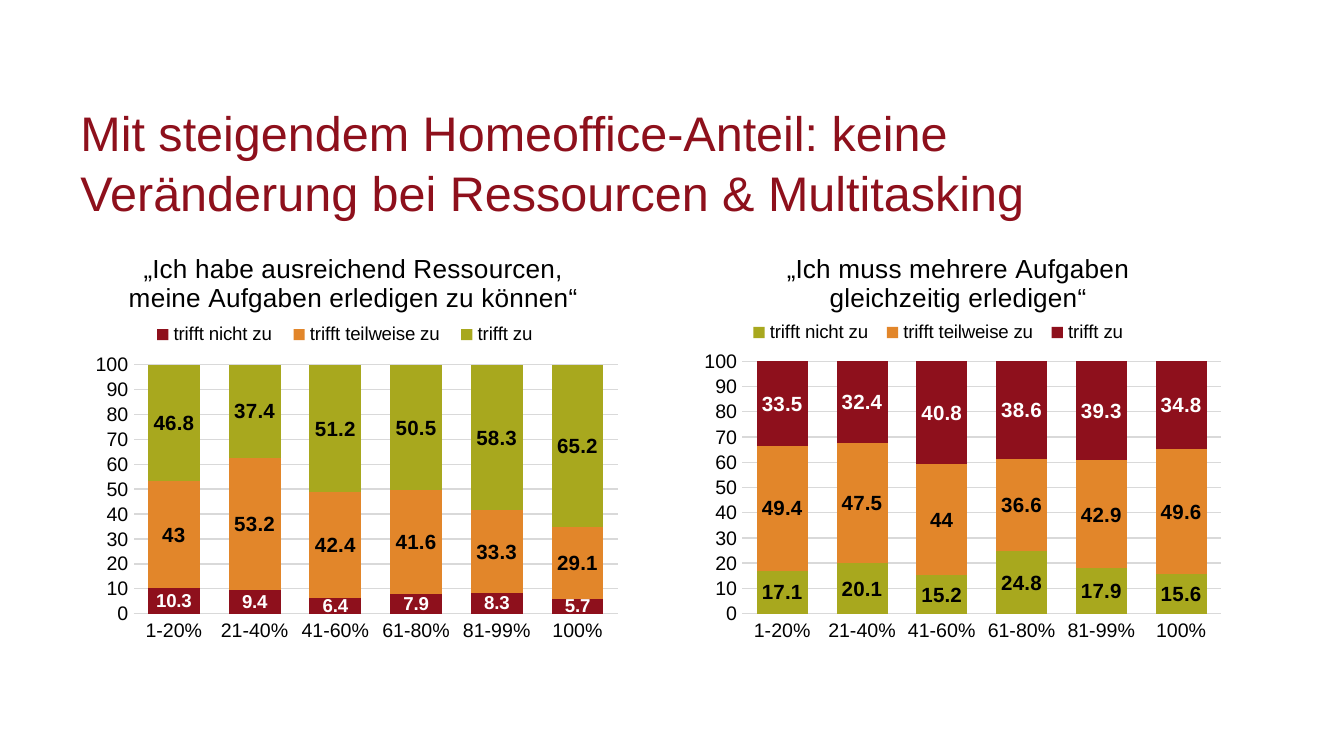
from lxml import etree
from pptx import Presentation
from pptx.chart.data import CategoryChartData
from pptx.dml.color import RGBColor
from pptx.enum.chart import XL_CHART_TYPE, XL_LABEL_POSITION, XL_LEGEND_POSITION, XL_TICK_MARK
from pptx.enum.text import MSO_ANCHOR
from pptx.oxml.ns import qn
from pptx.util import Cm, Pt

STACKED = XL_CHART_TYPE.COLUMN_STACKED
CENTER = XL_LABEL_POSITION.CENTER
LEGEND_TOP = XL_LEGEND_POSITION.TOP
NO_TICK = XL_TICK_MARK.NONE
TOP = MSO_ANCHOR.TOP

RED = RGBColor(0x8E, 0x10, 0x1C)
ORANGE = RGBColor(0xE2, 0x86, 0x2A)
GREEN = RGBColor(0xA8, 0xA8, 0x1E)
GRAY = RGBColor(0xD9, 0xD9, 0xD9)
BLACK = RGBColor(0, 0, 0)
WHITE = RGBColor(255, 255, 255)

FONT = "Arial"
CATEGORIES = ["1-20%", "21-40%", "41-60%", "61-80%", "81-99%", "100%"]
ANSWERS = ["trifft nicht zu", "trifft teilweise zu", "trifft zu"]


def style_font(font, size, color, bold=False):
    font.name = FONT
    font.size = Pt(size)
    font.bold = bold
    font.color.rgb = color


def place(element, index, **position):
    """Give a chart part a manual layout in fractions of the chart."""
    for old_layout in element.findall(qn("c:layout")):
        element.remove(old_layout)
    layout = etree.Element(qn("c:layout"))
    manual = etree.SubElement(layout, qn("c:manualLayout"))
    if index == 0:
        etree.SubElement(manual, qn("c:layoutTarget")).set("val", "inner")
    for axis in ("x", "y"):
        etree.SubElement(manual, qn(f"c:{axis}Mode")).set("val", "edge")
    for name, value in position.items():
        etree.SubElement(manual, qn(f"c:{name}")).set("val", str(value))
    element.insert(index, layout)


presentation = Presentation()
presentation.slide_width = Cm(25.4)
presentation.slide_height = Cm(14.29)
slide = presentation.slides.add_slide(presentation.slide_layouts[6])

# Headline
headline = slide.shapes.add_textbox(Cm(1.27), Cm(1.7), Cm(20.32), Cm(2.9))
frame = headline.text_frame
frame.word_wrap = True
frame.vertical_anchor = TOP
frame.margin_top = Cm(0.2)
paragraph = frame.paragraphs[0]
paragraph.line_spacing = 1.04
run = paragraph.add_run()
run.text = "Mit steigendem Homeoffice-Anteil: keine Veränderung bei Ressourcen & Multitasking"
style_font(run.font, 26, RED)

# Both charts: wording, values, bar colours, first label size and layouts
charts = [
    {
        "left": 1.27,
        "title": ["„Ich habe ausreichend Ressourcen,", "meine Aufgaben erledigen zu können“"],
        "values": [
            [10.3, 9.4, 6.4, 7.9, 8.3, 5.7],
            [43, 53.2, 42.4, 41.6, 33.3, 29.1],
            [46.8, 37.4, 51.2, 50.5, 58.3, 65.2],
        ],
        "colors": [RED, ORANGE, GREEN],
        "label_sizes": [10, 11, 11],
        "title_at": {"x": 0.1, "y": 0.05},
        "legend_at": {"x": 0.13, "y": 0.21, "w": 0.71, "h": 0.07},
        "plot_at": {"x": 0.116, "y": 0.317, "w": 0.846, "h": 0.596},
    },
    {
        "left": 12.7,
        "title": ["„Ich muss mehrere Aufgaben", "gleichzeitig erledigen“"],
        "values": [
            [17.1, 20.1, 15.2, 24.8, 17.9, 15.6],
            [49.4, 47.5, 44, 36.6, 42.9, 49.6],
            [33.5, 32.4, 40.8, 38.6, 39.3, 34.8],
        ],
        "colors": [GREEN, ORANGE, RED],
        "label_sizes": [11, 11, 11],
        "title_at": {"x": 0.2, "y": 0.05},
        "legend_at": {"x": 0.12, "y": 0.205, "w": 0.69, "h": 0.07},
        "plot_at": {"x": 0.123, "y": 0.309, "w": 0.836, "h": 0.604},
    },
]

for spec_row in charts:
    data = CategoryChartData(number_format="General")
    data.categories = CATEGORIES
    for answer, values in zip(ANSWERS, spec_row["values"]):
        data.add_series(answer, values)
    chart = slide.shapes.add_chart(
        STACKED, Cm(spec_row["left"]), Cm(4.39), Cm(10.82), Cm(7.9), data
    ).chart
    style_font(chart.font, 10, BLACK)

    # Chart title
    chart.has_title = True
    title_frame = chart.chart_title.text_frame
    for number, line in enumerate(spec_row["title"]):
        paragraph = title_frame.add_paragraph() if number else title_frame.paragraphs[0]
        run = paragraph.add_run()
        run.text = line
        style_font(run.font, 14, BLACK)
    place(title_frame._txBody.getparent().getparent().getparent(), 1, **spec_row["title_at"])

    # Legend
    chart.has_legend = True
    legend = chart.legend
    legend.position = LEGEND_TOP
    legend.include_in_layout = False
    style_font(legend.font, 10, BLACK)
    place(legend._element, 1, **spec_row["legend_at"])

    # Axes
    value_axis, category_axis = chart.value_axis, chart.category_axis
    for axis in (value_axis, category_axis):
        axis.major_tick_mark = NO_TICK
        axis.minor_tick_mark = NO_TICK
        style_font(axis.tick_labels.font, 10.5, BLACK)
    value_axis.minimum_scale = 0
    value_axis.maximum_scale = 100
    value_axis.major_unit = 10
    value_axis.format.line.fill.background()
    for line in (value_axis.major_gridlines.format.line, category_axis.format.line):
        line.color.rgb = GRAY
        line.width = Pt(0.75)

    # Bars and value labels
    plot = chart.plots[0]
    plot.gap_width = 56
    plot.overlap = 100
    plot.vary_by_categories = False
    for series, color, size in zip(plot.series, spec_row["colors"], spec_row["label_sizes"]):
        series.format.fill.solid()
        series.format.fill.fore_color.rgb = color
        labels = series.data_labels
        labels.show_value = True
        labels.position = CENTER
        style_font(labels.font, size, WHITE if color == RED else BLACK, bold=True)
    place(plot._element.getparent(), 0, **spec_row["plot_at"])

presentation.save("out.pptx")
